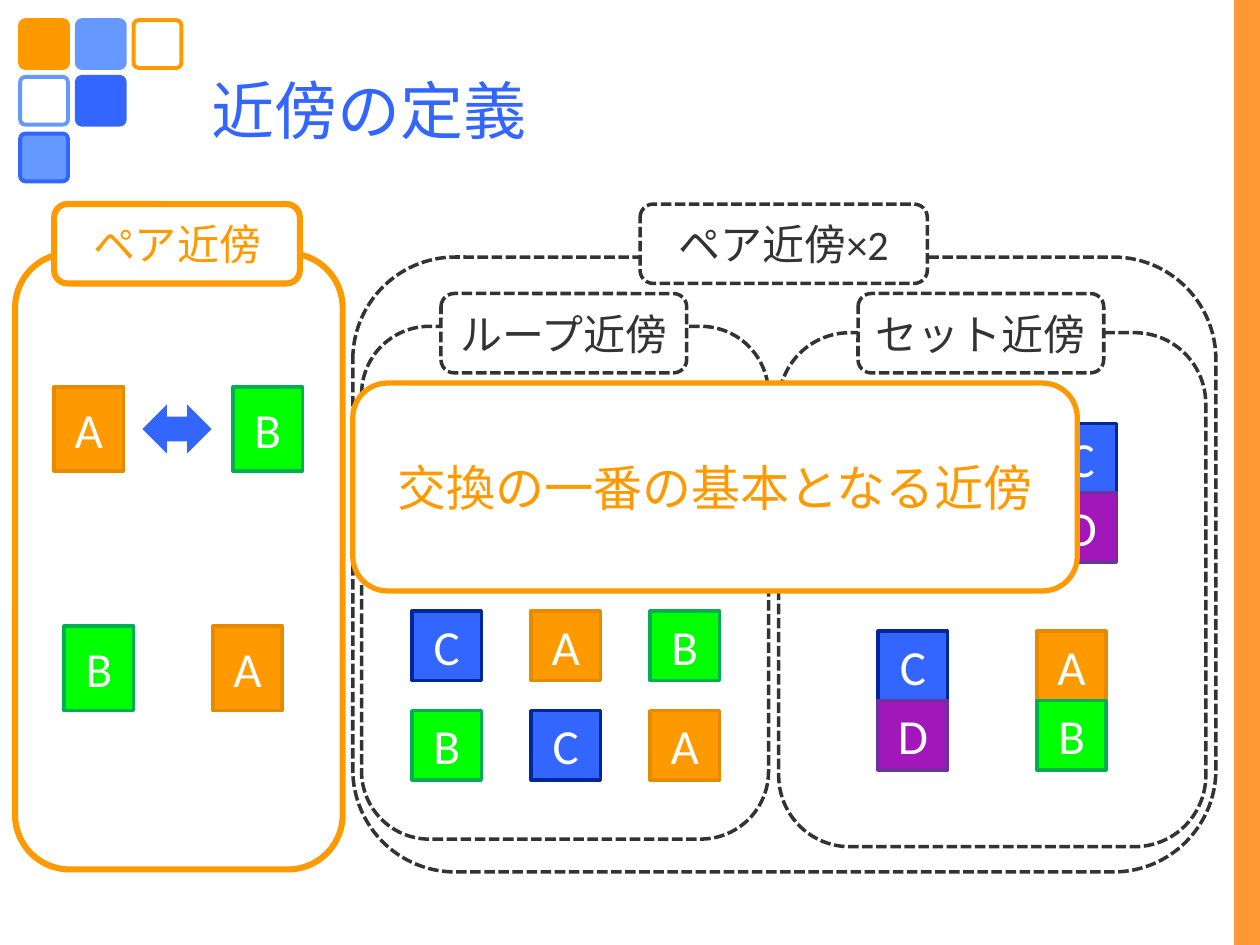
from dataclasses import dataclass

from pptx import Presentation
from pptx.dml.color import RGBColor
from pptx.enum.dml import MSO_LINE
from pptx.enum.shapes import MSO_SHAPE
from pptx.enum.text import MSO_ANCHOR, PP_ALIGN
from pptx.util import Inches, Pt

RECT = MSO_SHAPE.RECTANGLE
ROUND = MSO_SHAPE.ROUNDED_RECTANGLE
DOUBLE_ARROW = MSO_SHAPE.LEFT_RIGHT_ARROW
DASH = MSO_LINE.SQUARE_DOT
MIDDLE = MSO_ANCHOR.MIDDLE
LEFT, CENTER = PP_ALIGN.LEFT, PP_ALIGN.CENTER


@dataclass(frozen=True)
class Theme:
    font: str = "Calibri"
    white: str = "FFFFFF"
    blue: str = "3366FF"
    light_blue: str = "6699FF"
    orange: str = "FF9900"
    band: str = "FF9933"
    dark: str = "333333"
    title_size: int = 36
    large_size: int = 28
    label_size: int = 24


THEME = Theme()

# Letter: (fill, line)
TILE_COLORS = {
    "A": (THEME.orange, "E78A00"),
    "B": ("00FF00", "00B050"),
    "C": (THEME.blue, "002699"),
    "D": ("A217B9", "7030A0"),
}
TILE = 0.55
TALL_TILE = 0.67


def write_text(shape, text, size=THEME.large_size, color=THEME.white, align=CENTER):
    frame = shape.text_frame
    frame.word_wrap = True
    frame.vertical_anchor = MIDDLE
    para = frame.paragraphs[0]
    para.alignment = align
    span = para.add_run()
    span.text = text
    span.font.name = THEME.font
    span.font.size = Pt(size)
    span.font.color.rgb = RGBColor.from_string(color)


def add_box(page, kind, area, fill=None, line=None, width=2, dash=None):
    """Add a preset shape; area is left, top, width, height in inches."""
    box = page.shapes.add_shape(kind, *map(Inches, area))
    box.shadow.inherit = False
    if fill:
        box.fill.solid()
        box.fill.fore_color.rgb = RGBColor.from_string(fill)
    else:
        box.fill.background()
    if line:
        box.line.color.rgb = RGBColor.from_string(line)
        box.line.width = Pt(width)
        if dash:
            box.line.dash_style = dash
    else:
        box.line.fill.background()
    return box


def add_tile(page, letter, left, top, height=TILE):
    fill, line = TILE_COLORS[letter]
    tile = add_box(page, RECT, (left, top, TILE, height), fill, line)
    write_text(tile, letter)


def add_stack(page, letters, left, top):
    for row, letter in enumerate(letters):
        add_tile(page, letter, left, top + row * TILE)


def add_panel(page, frame_area, label_area, label, color=THEME.dark, width=2, dash=DASH):
    """Add a rounded frame with a label box on its top edge."""
    add_box(page, ROUND, frame_area, None, color, width, dash)
    box = add_box(page, ROUND, label_area, THEME.white, color, width, dash)
    write_text(box, label, size=THEME.label_size, color=color)


def add_decoration(page):
    # Column, row, fill, line
    squares = [
        (1, 0, THEME.light_blue, THEME.light_blue),
        (1, 1, THEME.blue, THEME.blue),
        (0, 0, THEME.orange, THEME.orange),
        (0, 1, THEME.white, THEME.light_blue),
        (0, 2, THEME.light_blue, THEME.blue),
        (2, 0, THEME.white, THEME.orange),
    ]
    start, step, side = 0.16, 0.45, 0.38
    for column, row, fill, line in squares:
        area = (start + column * step, start + row * step, side, side)
        square = add_box(page, ROUND, area, fill, line, 2.25)
        square.adjustments[0] = 0.11
    add_box(page, RECT, (9.8, 0, 0.2, 7.5), THEME.band, THEME.band, 0.75)


def add_title(page, text):
    box = page.shapes.add_textbox(*map(Inches, (1.58, 0.33, 7.67, 1.08)))
    write_text(box, text, size=THEME.title_size, color=THEME.blue, align=LEFT)


def add_pair_tiles(page):
    for letter, left, top in [("A", 0.43, 3.07), ("B", 1.85, 3.07),
                              ("A", 1.69, 4.97), ("B", 0.51, 4.97)]:
        add_tile(page, letter, left, top, TALL_TILE)


def add_loop_tiles(page):
    for row, letters in enumerate(("CAB", "BCA")):
        for column, letter in enumerate(letters):
            add_tile(page, letter, 3.27 + column * 0.945, 4.85 + row * 0.79)


def add_set_tiles(page):
    add_stack(page, "AB", 8.23, 5.01)
    add_stack(page, "CD", 6.97, 5.01)
    add_stack(page, "CD", 8.31, 3.36)


def main():
    deck = Presentation()
    deck.slide_width, deck.slide_height = Inches(10), Inches(7.5)
    page = deck.slides.add_slide(deck.slide_layouts[6])

    add_decoration(page)
    add_title(page, "近傍の定義")

    add_pair_tiles(page)
    add_loop_tiles(page)
    add_panel(page, (2.87, 2.59, 3.23, 4.07), (3.5, 2.33, 1.95, 0.63), "ループ近傍")
    add_set_tiles(page)
    add_panel(page, (6.18, 2.64, 3.39, 4.08), (6.81, 2.33, 1.95, 0.63), "セット近傍")
    add_panel(page, (0.12, 2.01, 2.6, 4.89), (0.43, 1.62, 1.95, 0.63), "ペア近傍",
              color=THEME.orange, width=3.5, dash=None)
    add_panel(page, (2.8, 2.04, 6.85, 4.88), (5.08, 1.62, 2.28, 0.63), "ペア近傍×2")

    message = add_box(page, ROUND, (2.8, 3.04, 5.75, 1.65), THEME.white, THEME.orange, 3)
    write_text(message, "交換の一番の基本となる近傍", color=THEME.orange)
    add_box(page, DOUBLE_ARROW, (1.13, 3.21, 0.55, 0.39), THEME.blue)

    deck.save("out.pptx")


if __name__ == "__main__":
    main()
